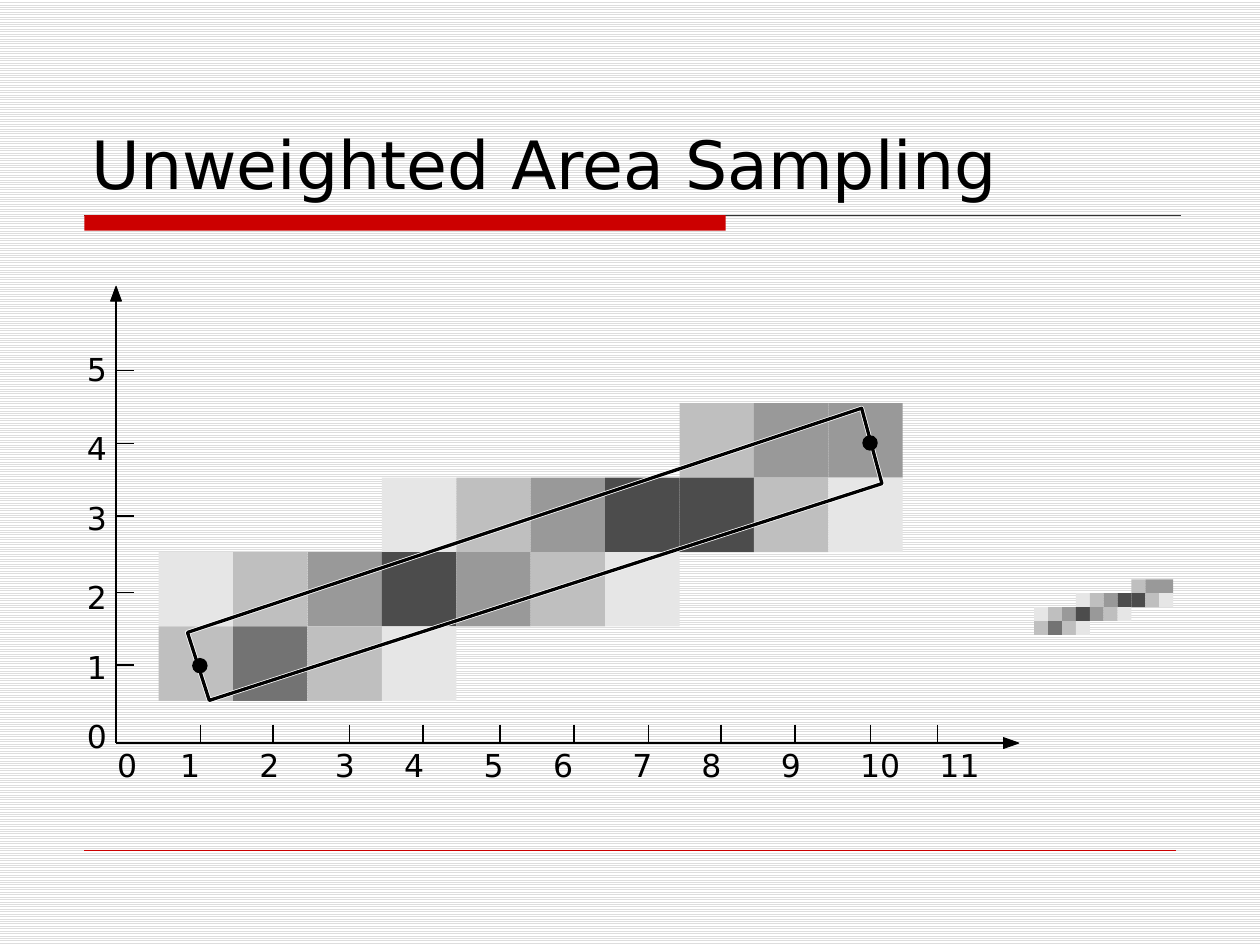
from pptx import Presentation
from pptx import util as u
from pptx.dml.color import RGBColor
from pptx.enum import dml, shapes, text
from pptx.oxml.ns import qn
from lxml import etree

FONT = "DejaVu Sans"
BLACK, WHITE, RED = "000000", "FFFFFF", "CC0000"
SHADES = {"E": "E6E6E6", "B": "BFBFBF", "9": "999999", "7": "737373", "4": "4C4C4C"}
# One letter per pixel, dots are uncovered pixels
COVERAGE = [".......B99", "...EB944BE", "EB949BE...", "B7BE......"]
ORIGIN_X, ORIGIN_Y = 2.34, 14.98
AXIS_WEIGHT = 0.88
TICK = 0.37
X_TICKS = [4.04, 5.5, 7.05, 8.53, 10.08, 11.57, 13.07, 14.53, 16.03, 17.55, 18.9]
Y_TICKS = [13.41, 11.94, 10.4, 8.94, 7.47]
X_LABELS = [2.11, 3.38, 4.98, 6.5, 7.9, 9.5, 10.9, 12.5, 13.89, 15.49, 17.09, 18.69]
Y_LABELS = [14.33, 12.93, 11.53, 9.93, 8.53, 6.93]
THICK_LINE = [(3.78, 12.75), (4.22, 14.12), (17.78, 9.75), (17.37, 8.23)]
ENDPOINTS = [(4.03, 13.42), (17.54, 8.93)]


def color(hex_string):
    return RGBColor.from_string(hex_string)


def paint(shape, fill=None, line=None, weight=0.75):
    """Set fill and outline; None leaves either one out."""
    shape.shadow.inherit = False
    if fill:
        shape.fill.solid()
        shape.fill.fore_color.rgb = color(fill)
    else:
        shape.fill.background()
    if line:
        shape.line.color.rgb = color(line)
        shape.line.width = u.Pt(weight)
    else:
        shape.line.fill.background()


def add_box(slide, left, top, width, height, kind=shapes.MSO_SHAPE.RECTANGLE, **style):
    shape = slide.shapes.add_shape(kind, u.Cm(left), u.Cm(top), u.Cm(width), u.Cm(height))
    paint(shape, **style)


def add_polygon(slide, points, **style):
    corners = [(u.Cm(x), u.Cm(y)) for x, y in points]
    builder = slide.shapes.build_freeform(*corners[0], scale=1.0)
    builder.add_line_segments(corners[1:], close=True)
    paint(builder.convert_to_shape(), **style)


def add_line(slide, x1, y1, x2, y2, line=BLACK, weight=AXIS_WEIGHT):
    connector = slide.shapes.add_connector(
        shapes.MSO_CONNECTOR.STRAIGHT, u.Cm(x1), u.Cm(y1), u.Cm(x2), u.Cm(y2))
    connector.line.color.rgb = color(line)
    connector.line.width = u.Pt(weight)
    etree.SubElement(connector._element.spPr, qn("a:effectLst"))


def add_text(slide, words, left, top, width, height, size=18, wrap=False,
             anchor=text.MSO_ANCHOR.TOP):
    box = slide.shapes.add_textbox(u.Cm(left), u.Cm(top), u.Cm(width), u.Cm(height))
    frame = box.text_frame
    frame.word_wrap = wrap
    frame.vertical_anchor = anchor
    run = frame.paragraphs[0].add_run()
    run.text = words
    run.font.name = FONT
    run.font.size = u.Pt(size)
    run.font.color.rgb = color(BLACK)


def add_label(slide, number, left, top):
    add_text(slide, str(number), left, top, 0.91 if number < 10 else 1.32, 1.02)


def add_pixels(slide, left, top, size):
    for row, codes in enumerate(COVERAGE):
        for column, code in enumerate(codes):
            if code in SHADES:
                add_box(slide, left + column * size, top + row * size, size, size,
                        fill=SHADES[code])


def add_axes(slide):
    for number, top in enumerate(Y_LABELS):
        add_label(slide, number, 1.5, top)
    for number, left in enumerate(X_LABELS):
        add_label(slide, number, left, 14.91)
    add_line(slide, ORIGIN_X, 5.9, ORIGIN_X, ORIGIN_Y)
    add_line(slide, ORIGIN_X, ORIGIN_Y, 20.27, ORIGIN_Y)
    for y in Y_TICKS:
        add_line(slide, ORIGIN_X, y, ORIGIN_X + TICK, y)
    for x in X_TICKS:
        add_line(slide, x, ORIGIN_Y - TICK, x, ORIGIN_Y)
    up_arrow = [(ORIGIN_X - 0.11, 6.07), (ORIGIN_X + 0.11, 6.07), (ORIGIN_X, 5.77)]
    right_arrow = [(20.23, ORIGIN_Y - 0.11), (20.23, ORIGIN_Y + 0.11), (20.54, ORIGIN_Y)]
    for arrow in (up_arrow, right_arrow):
        add_polygon(slide, arrow, fill=BLACK, line=BLACK, weight=0.5)


def add_sampled_line(slide):
    add_polygon(slide, THICK_LINE, line=WHITE, weight=2.75)
    for x, y in ENDPOINTS:
        add_box(slide, x - 0.14, y - 0.14, 0.28, 0.28, kind=shapes.MSO_SHAPE.OVAL,
                fill=BLACK, line=BLACK, weight=AXIS_WEIGHT)
    add_polygon(slide, THICK_LINE, line=BLACK, weight=1.88)


def add_frame(slide):
    """Striped background, title and the rules around the content."""
    fill = slide.background.fill
    fill.patterned()
    fill.pattern = dml.MSO_PATTERN.LIGHT_HORIZONTAL
    fill.fore_color.rgb = color("DDDDDD")
    fill.back_color.rgb = color(WHITE)
    add_line(slide, 1.7, 4.34, 23.8, 4.34, line="333333", weight=0.75)
    add_box(slide, 1.7, 4.34, 12.93, 0.31, fill=RED)
    add_line(slide, 1.7, 17.15, 23.7, 17.15, line=RED, weight=0.25)
    add_text(slide, "Unweighted Area Sampling", 1.6, 0.84, 22.22, 3.38, size=38,
             wrap=True, anchor=text.MSO_ANCHOR.BOTTOM)


def main():
    presentation = Presentation()
    presentation.slide_width = u.Cm(25.4)
    presentation.slide_height = u.Cm(19.05)
    slide = presentation.slides.add_slide(presentation.slide_layouts[6])
    add_frame(slide)
    add_pixels(slide, left=3.2, top=8.13, size=1.5)
    add_axes(slide)
    add_sampled_line(slide)
    add_pixels(slide, left=20.85, top=11.68, size=0.28)
    presentation.save("out.pptx")


if __name__ == "__main__":
    main()
